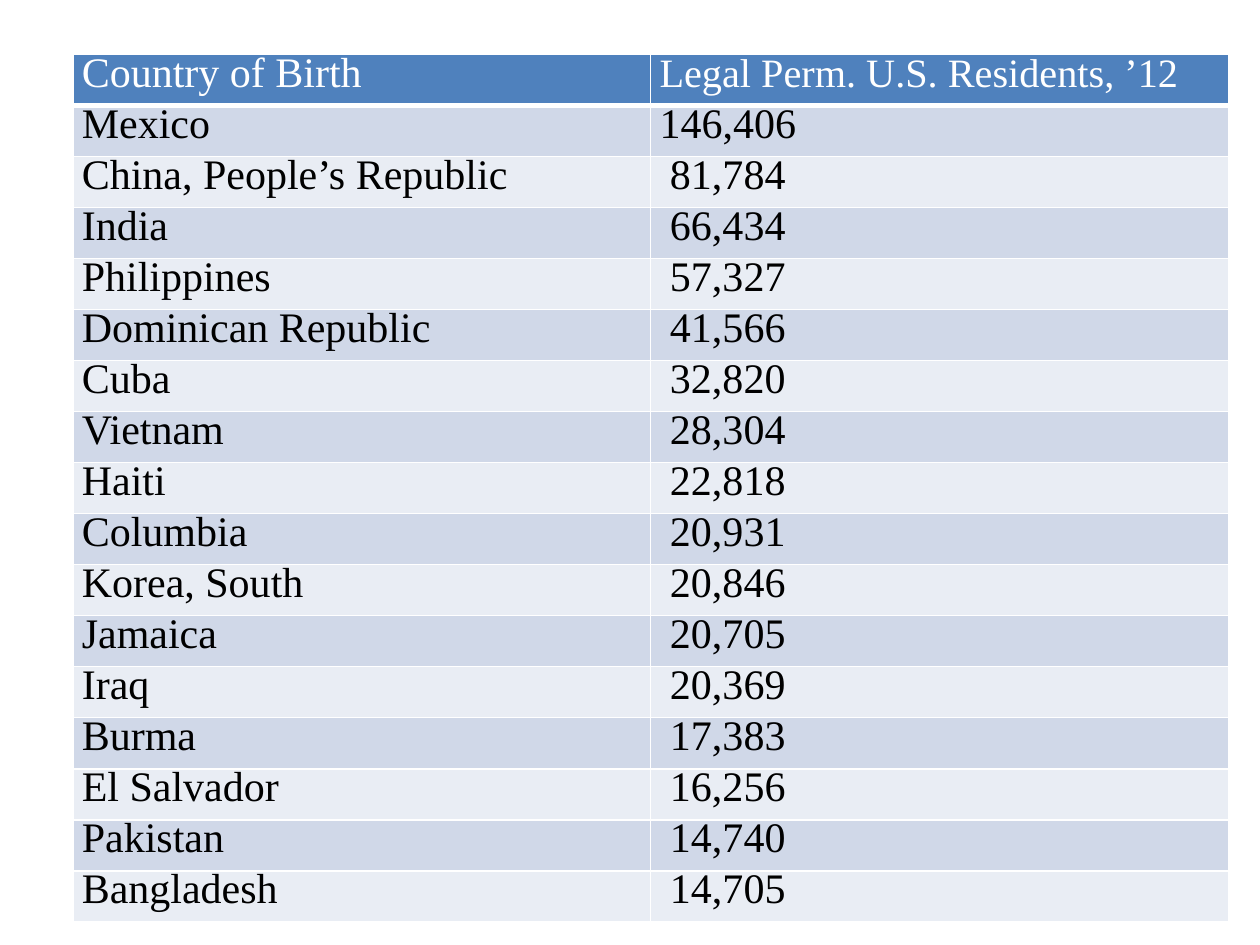
from dataclasses import dataclass

from lxml import etree
from pptx import Presentation
from pptx import util as u
from pptx.dml.color import RGBColor
from pptx.oxml import ns


@dataclass(frozen=True)
class Theme:
    font: str = "Times New Roman"
    size: int = 24
    head_size: int = 23
    white: str = "FFFFFF"
    ink: str = "000000"
    head: str = "4F81BD"
    bands: tuple = ("D0D8E8", "E9EDF4")
    rule: int = 1
    head_rule: int = 3


ROWS = [
    ("Country of Birth", "Legal Perm. U.S. Residents, ’12"),
    ("Mexico", "146,406"),
    ("China, People’s Republic", " 81,784"),
    ("India", " 66,434"),
    ("Philippines", " 57,327"),
    ("Dominican Republic", " 41,566"),
    ("Cuba", " 32,820"),
    ("Vietnam", " 28,304"),
    ("Haiti", " 22,818"),
    ("Columbia", " 20,931"),
    ("Korea, South", " 20,846"),
    ("Jamaica", " 20,705"),
    ("Iraq", " 20,369"),
    ("Burma", " 17,383"),
    ("El Salvador", " 16,256"),
    ("Pakistan", " 14,740"),
    ("Bangladesh", " 14,705"),
]


class Deck:
    def __init__(self, theme, slide):
        self.theme = theme
        self.slide = slide

    def table(self, rows, left, top, width, height):
        t = self.theme
        box = [u.Inches(n) for n in (left, top, width, height)]
        grid = self.slide.shapes.add_table(len(rows), len(rows[0]), *box).table
        for r, row in enumerate(rows):
            grid.rows[r].height = u.Inches(height / len(rows))
            fill = t.bands[(r - 1) % 2] if r else t.head
            color = t.ink if r else t.white
            for c, words in enumerate(row):
                size = t.head_size if r == 0 and c == 1 else t.size
                self.cell(grid.cell(r, c), words, fill, color, size)
                self.edges(grid.cell(r, c),
                           T=t.head_rule if r == 1 else t.rule,
                           B=t.head_rule if r == 0 else t.rule)

    def cell(self, cell, words, fill, color, size):
        pads = {"margin_left": 0.07, "margin_right": 0.07,
                "margin_top": 0, "margin_bottom": 0}
        for name, pad in pads.items():
            setattr(cell, name, u.Inches(pad))
        cell.fill.solid()
        cell.fill.fore_color.rgb = RGBColor.from_string(fill)
        para = cell.text_frame.paragraphs[0]
        para.line_spacing = u.Pt(self.theme.size)
        run = para.add_run()
        run.text = words
        look = {"name": self.theme.font, "size": u.Pt(size), "bold": False}
        for name, value in look.items():
            setattr(run.font, name, value)
        run.font.color.rgb = RGBColor.from_string(color)

    def edges(self, cell, **wide):
        """Draw the four cell borders; wide gives points by side letter."""
        props = cell._tc.get_or_add_tcPr()
        for i, side in enumerate("LRTB"):
            width = u.Pt(wide.get(side, self.theme.rule))
            line = etree.Element(ns.qn(f"a:ln{side}"), w=str(int(width)))
            paint = etree.SubElement(line, ns.qn("a:solidFill"))
            etree.SubElement(paint, ns.qn("a:srgbClr"), val=self.theme.white)
            props.insert(i, line)


def main():
    show = Presentation()
    show.slide_width, show.slide_height = u.Inches(10), u.Inches(7.5)
    deck = Deck(Theme(), show.slides.add_slide(show.slide_layouts[6]))
    deck.table(ROWS, 0.58, 0.43, 9.17, 6.89)
    show.save("out.pptx")


if __name__ == "__main__":
    main()
